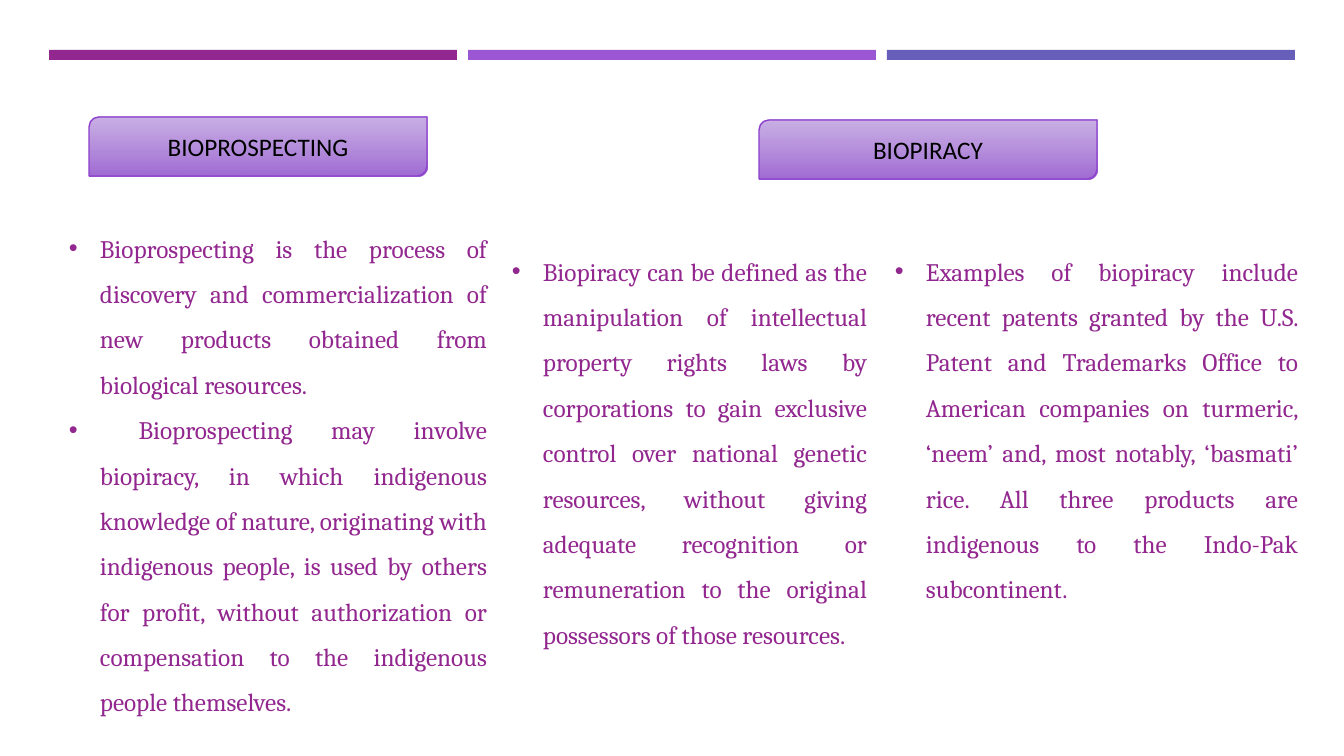
"""Build a slide that sets bioprospecting beside biopiracy."""
from dataclasses import dataclass

from lxml.etree import SubElement
from pptx import Presentation
from pptx.dml.color import RGBColor
from pptx.enum.shapes import MSO_SHAPE
from pptx.enum.text import MSO_ANCHOR, PP_ALIGN
from pptx.oxml.ns import qn
from pptx.util import Emu, Pt


@dataclass(frozen=True)
class Theme:
    bars: tuple = ("92278F", "9B57D3", "665EB8")
    heading_top: str = "C3A7E2"
    heading_bottom: str = "A06BD4"
    heading_line: str = "8D3FCD"
    heading_text: str = "000000"
    body_text: str = "92278F"
    heading_font: str = "Calibri"
    body_font: str = "Cambria"
    size: int = 18


theme = Theme()


def px(*lengths):
    return [Emu(round(length * 914400 / 100.8)) for length in lengths]


def style(paragraph, font_name, color, alignment):
    paragraph.alignment = alignment
    paragraph.font.name = font_name
    paragraph.font.size = Pt(theme.size)
    paragraph.font.color.rgb = RGBColor.from_string(color)


presentation = Presentation()
presentation.slide_width, presentation.slide_height = px(1344, 756)
slide = presentation.slides.add_slide(presentation.slide_layouts[6])

for column, color in enumerate(theme.bars):
    bar = slide.shapes.add_shape(
        MSO_SHAPE.RECTANGLE, *px(49 + 419 * column, 50, 408, 10))
    bar.shadow.inherit = False
    bar.fill.solid()
    bar.fill.fore_color.rgb = RGBColor.from_string(color)
    bar.line.fill.background()

headings = [("BIOPROSPECTING", 89, 117), ("BIOPIRACY", 759, 120)]
for title, left, top in headings:
    heading = slide.shapes.add_shape(
        MSO_SHAPE.ROUND_2_DIAG_RECTANGLE, *px(left, top, 338, 59))
    heading.shadow.inherit = False
    heading.fill.gradient()
    heading.fill.gradient_angle = 270
    upper, lower = heading.fill.gradient_stops
    upper.color.rgb = RGBColor.from_string(theme.heading_top)
    lower.color.rgb = RGBColor.from_string(theme.heading_bottom)
    upper.position, lower.position = 0, 1
    upper_color = next(heading.element.iter(qn("a:srgbClr")))
    SubElement(upper_color, qn("a:alpha"), val="90000")
    heading.line.color.rgb = RGBColor.from_string(theme.heading_line)
    heading.line.width = Pt(1)
    heading.text_frame.vertical_anchor = MSO_ANCHOR.MIDDLE
    label = heading.text_frame.paragraphs[0]
    label.text = title
    style(label, theme.heading_font, theme.heading_text, PP_ALIGN.CENTER)

columns = [
    ((59, 213, 438, 509), [
        "Bioprospecting is the process of discovery and commercialization of "
        "new products obtained from biological resources.",
        " Bioprospecting may involve biopiracy, in which indigenous knowledge "
        "of nature, originating with indigenous people, is used by others for "
        "profit, without authorization or compensation to the indigenous "
        "people themselves."]),
    ((502, 236, 375, 464), [
        "Biopiracy can be defined as the manipulation of intellectual property "
        "rights laws by corporations to gain exclusive control over national "
        "genetic resources, without giving adequate recognition or "
        "remuneration to the original possessors of those resources."]),
    ((885, 236, 423, 372), [
        "Examples of biopiracy include recent patents granted by the U.S. "
        "Patent and Trademarks Office to American companies on turmeric, "
        "‘neem’ and, most notably, ‘basmati’ rice. All three products are "
        "indigenous to the Indo-Pak subcontinent."]),
]
[indent] = px(31)
for bounds, points in columns:
    body = slide.shapes.add_textbox(*px(*bounds)).text_frame
    body.word_wrap = True
    body.text = "\n".join(points)
    for point in body.paragraphs:
        style(point, theme.body_font, theme.body_text, PP_ALIGN.JUSTIFY)
        point.line_spacing = 1.5
        properties = point._p.get_or_add_pPr()
        properties.set("marL", str(indent))
        properties.set("indent", str(-indent))
        bullet_font = properties.makeelement(qn("a:buFont"), typeface="Arial")
        bullet = properties.makeelement(qn("a:buChar"), char="•")
        properties.find(qn("a:defRPr")).addprevious(bullet_font)
        bullet_font.addnext(bullet)

presentation.save("out.pptx")
